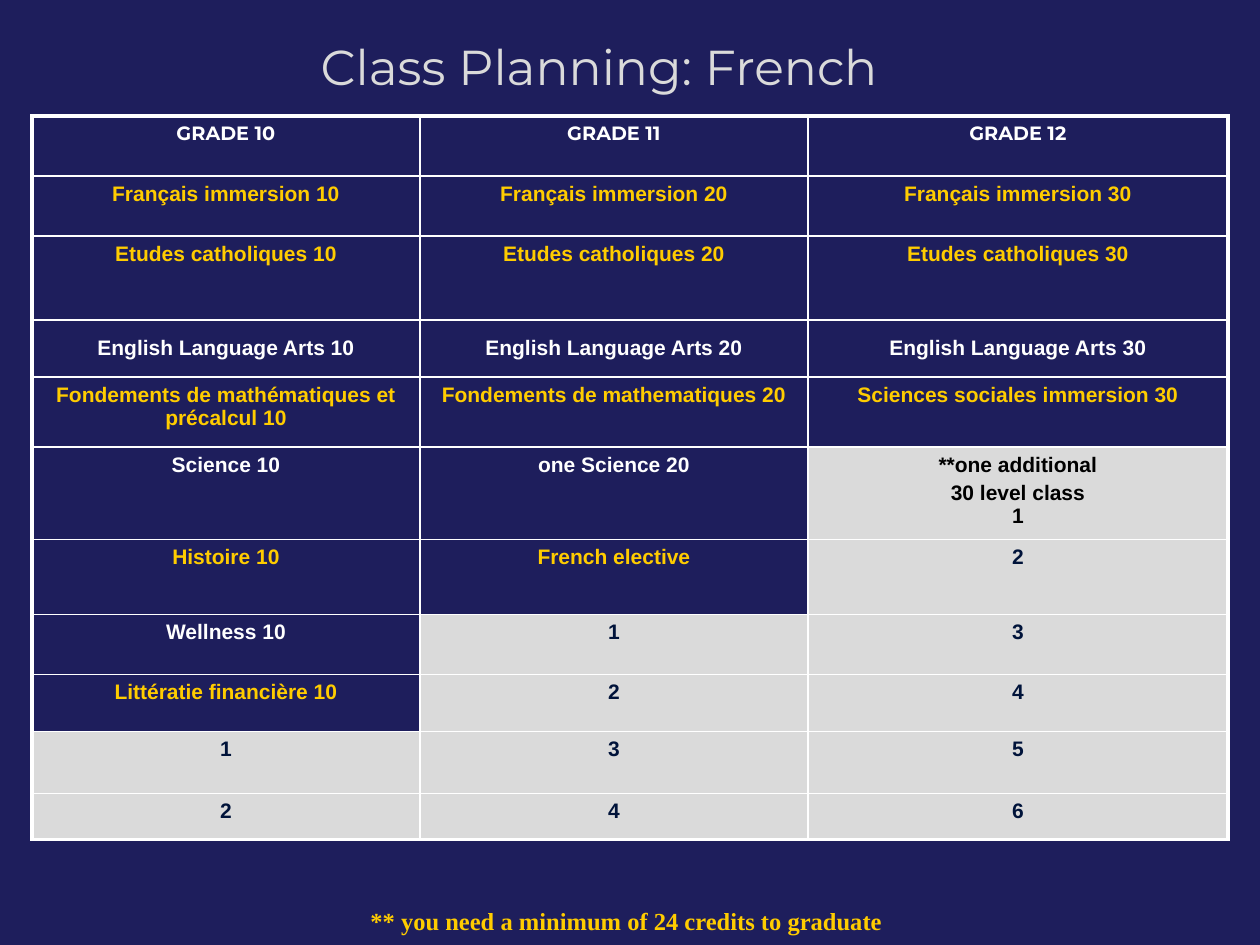
from dataclasses import dataclass

from lxml.etree import SubElement
from pptx import Presentation
from pptx.dml.color import RGBColor
from pptx.enum.text import MSO_ANCHOR, PP_ALIGN
from pptx.oxml.ns import qn
from pptx.util import Emu, Pt

PX = 914400 // 126


@dataclass(frozen=True)
class Theme:
    navy: str = "1E1E5C"
    grey: str = "DADADA"
    white: str = "FFFFFF"
    gold: str = "FFCC00"
    ink: str = "00133A"
    black: str = "000000"
    heading_font: str = "Montserrat"
    body_font: str = "Arial"
    note_font: str = "Times New Roman"
    title_size: int = 28
    header_size: int = 11
    course_size: int = 12
    note_size: int = 14
    outer_line: float = 2.25
    inner_line: float = 1


THEME = Theme()

# Kind of entry: text colour, cell fill, font, size
STYLES = {
    "header": (THEME.white, None, THEME.heading_font, THEME.header_size),
    "french": (THEME.gold, None, THEME.body_font, THEME.course_size),
    "english": (THEME.white, None, THEME.body_font, THEME.course_size),
    "extra": (THEME.black, THEME.grey, THEME.body_font, THEME.course_size),
    "elective": (THEME.ink, THEME.grey, THEME.body_font, THEME.course_size),
}

GRADE_WIDTHS = [388, 388, 420]

# Row height, kinds (one for the row or one per grade), entries; "\n" starts a
# paragraph and "\v" breaks a line
PLAN = [
    (60, ["header"] * 3, ["GRADE 10", "GRADE 11", "GRADE 12"]),
    (60, ["french"] * 3, [f"Français immersion {level}" for level in (10, 20, 30)]),
    (84, ["french"] * 3, [f"Etudes catholiques {level}" for level in (10, 20, 30)]),
    (57, ["english"] * 3, [f"English Language Arts {level}" for level in (10, 20, 30)]),
    (70, ["french"] * 3, ["Fondements de mathématiques et précalcul 10",
                          "Fondements de mathematiques 20",
                          "Sciences sociales immersion 30"]),
    (87, ["english", "english", "extra"],
     ["Science 10", "one Science 20", "**one additional\n30 level class\v1"]),
    (75, ["french", "french", "elective"], ["Histoire 10", "French elective", "2"]),
    (60, ["english", "elective", "elective"], ["Wellness 10", "1", "3"]),
    (57, ["french", "elective", "elective"], ["Littératie financière 10", "2", "4"]),
    (62, ["elective"] * 3, ["1", "3", "5"]),
    (46, ["elective"] * 3, ["2", "4", "6"]),
]
CENTRED_ROW = 3


def px(length):
    return Emu(length * PX)


def add_run(paragraph, text, font_name, size, color, bold=False):
    run = paragraph.add_run()
    run.text = text
    run.font.name = font_name
    run.font.size = Pt(size)
    run.font.bold = bold
    run.font.color.rgb = RGBColor.from_string(color)
    return run


def add_text_shadow(run):
    effects = SubElement(run.font._element, qn("a:effectLst"))
    shadow = SubElement(effects, qn("a:outerShdw"),
                        blurRad="38100", dist="25400", dir="2700000")
    color = SubElement(shadow, qn("a:srgbClr"), val=THEME.black)
    SubElement(color, qn("a:alpha"), val="50000")
    # Effects belong before the typeface
    run.font._element.find(qn("a:latin")).addprevious(effects)


def add_title(slide, left, top, width, height):
    frame = slide.shapes.add_textbox(*map(px, (left, top, width, height))).text_frame
    frame.word_wrap = True
    frame.vertical_anchor = MSO_ANCHOR.MIDDLE
    heading = frame.paragraphs[0]
    heading.alignment = PP_ALIGN.CENTER
    add_text_shadow(add_run(heading, "Class Planning: French", THEME.heading_font,
                            THEME.title_size, THEME.grey))


def set_borders(cell, outer_sides):
    """Draw the four sides, with the table's outer sides heavier."""
    properties = cell._tc.get_or_add_tcPr()
    for side in "LRTB":
        weight = THEME.outer_line if side in outer_sides else THEME.inner_line
        line = SubElement(properties, qn(f"a:ln{side}"), w=str(Pt(weight)))
        fill = SubElement(line, qn("a:solidFill"))
        SubElement(fill, qn("a:srgbClr"), val=THEME.white)


def fill_cell(cell, kind, entry):
    color, background, font_name, size = STYLES[kind]
    if background:
        cell.fill.solid()
        cell.fill.fore_color.rgb = RGBColor.from_string(background)
    else:
        cell.fill.background()
    for index, text in enumerate(entry.split("\n")):
        frame = cell.text_frame
        paragraph = frame.add_paragraph() if index else frame.paragraphs[0]
        paragraph.alignment = PP_ALIGN.CENTER
        if index:
            paragraph.space_before = Pt(size * 0.2)
        for line_index, line in enumerate(text.split("\v")):
            if line_index:
                paragraph.add_line_break()
            add_run(paragraph, line, font_name, size, color, bold=True)


def add_plan(slide, left, top):
    last_row, last_grade = len(PLAN) - 1, len(GRADE_WIDTHS) - 1
    total_height = sum(height for height, _, _ in PLAN)
    plan = slide.shapes.add_table(
        len(PLAN), len(GRADE_WIDTHS), px(left), px(top),
        px(sum(GRADE_WIDTHS)), px(total_height)).table
    plan.first_row = plan.horz_banding = False
    for column, width in zip(plan.columns, GRADE_WIDTHS):
        column.width = px(width)
    for row, (height, kinds, entries) in enumerate(PLAN):
        plan.rows[row].height = px(height)
        for grade, (kind, entry) in enumerate(zip(kinds, entries)):
            cell = plan.cell(row, grade)
            outer = {"L": grade == 0, "R": grade == last_grade,
                     "T": row == 0, "B": row == last_row}
            set_borders(cell, [side for side, is_outer in outer.items() if is_outer])
            fill_cell(cell, kind, entry)
            if row == CENTRED_ROW:
                cell.vertical_anchor = MSO_ANCHOR.MIDDLE


def add_credit_note(slide, left, top, width, height):
    frame = slide.shapes.add_textbox(*map(px, (left, top, width, height))).text_frame
    frame.word_wrap = False
    add_run(frame.paragraphs[0], "** you need a minimum of 24 credits to graduate",
            THEME.note_font, THEME.note_size, THEME.gold, bold=True)


def main():
    deck = Presentation()
    deck.slide_width, deck.slide_height = px(1260), px(945)
    slide = deck.slides.add_slide(deck.slide_layouts[6])
    slide.background.fill.solid()
    slide.background.fill.fore_color.rgb = RGBColor.from_string(THEME.navy)
    add_title(slide, 32, 18, 1134, 95)
    add_plan(slide, 32, 116)
    add_credit_note(slide, 358, 900, 543, 43)
    deck.save("out.pptx")


if __name__ == "__main__":
    main()
